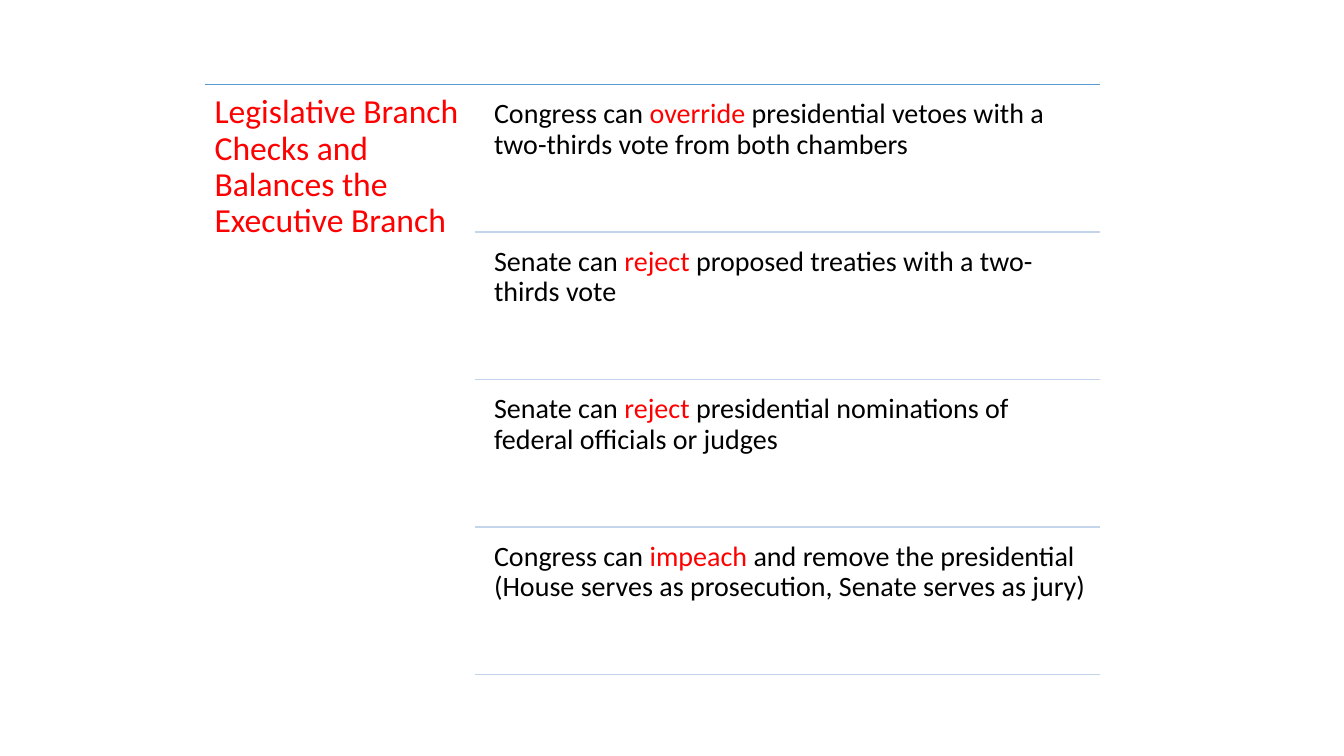
from dataclasses import dataclass

from pptx import Presentation
from pptx.dml.color import RGBColor
from pptx.enum.text import MSO_ANCHOR as Anchor, PP_ALIGN as Align
from pptx.oxml.ns import qn
from pptx.oxml.xmlchemy import OxmlElement
from pptx.slide import Slide
from pptx.util import Inches, Pt

RED, BLACK, BLUE, PALE_BLUE = "FF0000", "000000", "5B9BD5", "C4D5EB"
GRID_LEFT, GRID_RIGHT = 2.03, 10.91
GRID_TOP, GRID_BOTTOM = 0.84, 6.69
CHECK_COLUMN = 4.71
TEXT_INDENT, TEXT_DROP = 0.11, 0.07


@dataclass(frozen=True)
class Check:
    branch: str
    power: str
    detail: str


CHECKS = (
    Check("Congress can ", "override",
          " presidential vetoes with a two-thirds vote from both chambers"),
    Check("Senate can ", "reject", " proposed treaties with a two-thirds vote"),
    Check("Senate can ", "reject",
          " presidential nominations of federal officials or judges"),
    Check("Congress can ", "impeach ",
          "and remove the presidential "
          "(House serves as prosecution, Senate serves as jury)"),
)
ROW_HEIGHT = (GRID_BOTTOM - GRID_TOP) / len(CHECKS)


def color(value: str) -> RGBColor:
    return RGBColor.from_string(value)


def draw_rule(slide: Slide, left: float, top: float, line_color: str) -> None:
    ends = [Inches(value) for value in (left, top, GRID_RIGHT, top)]
    rule = slide.shapes.add_connector(1, *ends)
    rule.line.color.rgb = color(line_color)
    rule.line.width = Pt(1)
    rule.element.find(qn("p:spPr")).append(OxmlElement("a:effectLst"))


def draw_text(slide: Slide, box: tuple[float, float, float, float], inset: float,
              size: int, pieces: list[tuple[str, str]]) -> None:
    frame = slide.shapes.add_textbox(*map(Inches, box)).text_frame
    margins = {f"margin_{side}": Inches(inset)
               for side in ("left", "top", "right", "bottom")}
    frame_format = {"word_wrap": True, "vertical_anchor": Anchor.TOP, **margins}
    for name, value in frame_format.items():
        setattr(frame, name, value)
    paragraph = frame.paragraphs[0]
    for name, value in {"alignment": Align.LEFT, "line_spacing": 0.9}.items():
        setattr(paragraph, name, value)
    for text, text_color in pieces:
        run = paragraph.add_run()
        run.text = text
        for name, value in {"name": "Calibri", "size": Pt(size)}.items():
            setattr(run.font, name, value)
        run.font.color.rgb = color(text_color)


def draw_check(slide: Slide, row: int, check: Check) -> None:
    top = GRID_TOP + row * ROW_HEIGHT
    left = CHECK_COLUMN + TEXT_INDENT
    box = (left, top + TEXT_DROP, GRID_RIGHT - left, ROW_HEIGHT - TEXT_DROP)
    pieces = [(check.branch, BLACK), (check.power, RED), (check.detail, BLACK)]
    draw_text(slide, box, 0.08, 20, pieces)
    draw_rule(slide, CHECK_COLUMN, top + ROW_HEIGHT, PALE_BLUE)


def main() -> None:
    """Build the slide on checks the legislative branch holds over the executive."""
    presentation = Presentation()
    presentation.slide_width, presentation.slide_height = Inches(13.33), Inches(7.5)
    slide = presentation.slides.add_slide(presentation.slide_layouts[6])
    draw_rule(slide, GRID_LEFT, GRID_TOP, BLUE)
    heading_box = (GRID_LEFT, GRID_TOP, CHECK_COLUMN - GRID_LEFT, GRID_BOTTOM - GRID_TOP)
    heading = "Legislative Branch Checks and Balances the Executive Branch"
    draw_text(slide, heading_box, 0.1, 24, [(heading, RED)])
    for row, check in enumerate(CHECKS):
        draw_check(slide, row, check)
    presentation.save("out.pptx")


if __name__ == "__main__":
    main()
